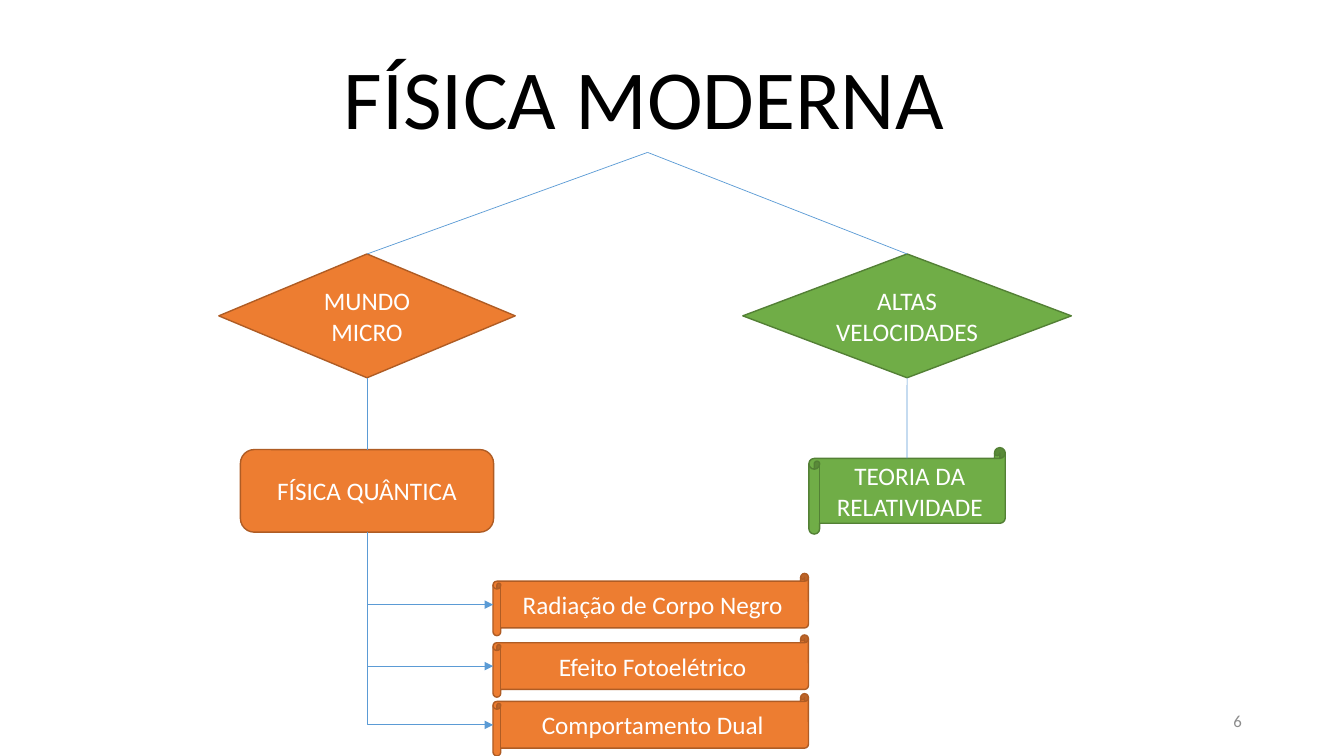
from lxml.etree import SubElement
from pptx import Presentation
from pptx.dml.color import RGBColor
from pptx.enum.shapes import MSO_CONNECTOR as LINK, MSO_SHAPE as SHAPE
from pptx.enum.text import MSO_ANCHOR as ANCHOR, MSO_AUTO_SIZE as FIT, PP_ALIGN as ALIGN
from pptx.oxml.ns import qn
from pptx.util import Cm, Pt

# Content: text, then centre x, top, width, height in cm
TITLE = ("FÍSICA MODERNA", 16.32, 1.02, 15.82, 2.82)
PAGE_NUMBER = ("6", 31.09, 17.65, 0.91, 1.02)
NODES = {
    "micro": ("MUNDO MICRO", 9.25, 6.4, 7.47, 3.12, SHAPE.DIAMOND, "orange"),
    "fast": ("ALTAS VELOCIDADES", 22.86, 6.4, 8.28, 3.12, SHAPE.DIAMOND, "green"),
    "quantum": ("FÍSICA QUÂNTICA", 9.25, 11.33, 6.38, 2.08, SHAPE.ROUNDED_RECTANGLE, "orange"),
    "relativity": ("TEORIA DA RELATIVIDADE", 22.86, 11.28, 4.95, 2.18, SHAPE.HORIZONTAL_SCROLL, "green"),
}
TOPICS = [("Radiação de Corpo Negro", 14.45), ("Efeito Fotoelétrico", 16), ("Comportamento Dual", 17.48)]
TOPIC_CENTRE, TOPIC_WIDTH, TOPIC_HEIGHT = 16.4, 7.95, 1.57
LINKS = [("title", "micro"), ("title", "fast"), ("micro", "quantum"), ("fast", "relativity")]

COLORS = {
    "orange": "ED7D31", "orange edge": "AF5C24",
    "green": "70AD47", "green edge": "538035",
    "link": "5B9BD5", "white": "FFFFFF", "black": "000000", "grey": "8C8C8C",
}
SCROLL_CURL = 0.125  # the curl's share of a scroll's height


def rgb(name):
    return RGBColor.from_string(COLORS[name])


def frame(centre, top, width, height):
    return [Cm(value) for value in (centre - width / 2, top, width, height)]


def write(box, text, size, color, align, anchor, fit=FIT.NONE):
    body = box.text_frame
    for name, value in {"word_wrap": True, "auto_size": fit, "vertical_anchor": anchor}.items():
        setattr(body, name, value)
    para = body.paragraphs[0]
    para.alignment = align
    span = para.add_run()
    span.text = text
    for name, value in {"name": "Calibri", "size": Pt(size)}.items():
        setattr(span.font, name, value)
    span.font.color.rgb = rgb(color)


def add_node(page, text, centre, top, width, height, kind, color):
    node = page.shapes.add_shape(kind, *frame(centre, top, width, height))
    node.shadow.inherit = False
    node.fill.solid()
    node.fill.fore_color.rgb = rgb(color)
    node.line.color.rgb = rgb(color + " edge")
    node.line.width = Pt(1)
    write(node, text, 18, "white", ALIGN.CENTER, ANCHOR.MIDDLE)
    return node


def add_link(page, kind, arrow=False):
    link = page.shapes.add_connector(kind, 0, 0, 0, 0)
    link.line.color.rgb = rgb("link")
    link.line.width = Pt(0.5)
    if arrow:
        SubElement(link.line._get_or_add_ln(), qn("a:tailEnd"), type="triangle")
    SubElement(link._element.spPr, qn("a:effectLst"))
    return link


def add_branch(page, source, target):
    """Elbow that drops from the source's bottom and turns right to the target."""
    start_x, start_y = source.left + source.width // 2, source.top + source.height
    run = target.left - start_x
    drop = target.top + target.height // 2 - start_y
    link = add_link(page, LINK.ELBOW, arrow=True)
    # The one-bend preset is turned by 270 degrees, so its box swaps width and height
    place = {"left": start_x + (run - drop) // 2, "top": start_y + (drop - run) // 2,
             "width": drop, "height": run}
    for name, value in place.items():
        setattr(link, name, value)
    properties = link._element.spPr
    properties.find(qn("a:prstGeom")).set("prst", "bentConnector2")
    turn = properties.find(qn("a:xfrm"))
    turn.set("rot", "16200000")
    turn.set("flipH", "1")


def main():
    deck = Presentation()
    deck.slide_width, deck.slide_height = Cm(33.87), Cm(19.05)
    page = deck.slides.add_slide(deck.slide_layouts[5])

    # Title and page number
    title = page.shapes.title
    title.left, title.top, title.width, title.height = frame(*TITLE[1:])
    write(title, TITLE[0], 60, "black", ALIGN.LEFT, ANCHOR.TOP, FIT.SHAPE_TO_FIT_TEXT)
    number = page.shapes.add_textbox(*frame(*PAGE_NUMBER[1:]))
    write(number, PAGE_NUMBER[0], 12, "grey", ALIGN.RIGHT, ANCHOR.MIDDLE)

    # Nodes of the tree
    boxes = {"title": title}
    for key, node in NODES.items():
        boxes[key] = add_node(page, *node)
    topics = [add_node(page, text, TOPIC_CENTRE, top, TOPIC_WIDTH, TOPIC_HEIGHT,
                       SHAPE.HORIZONTAL_SCROLL, "orange") for text, top in TOPICS]

    # Straight links, from bottom to top
    for source, target in LINKS:
        link = add_link(page, LINK.STRAIGHT)
        link.begin_connect(boxes[source], 2)
        link.end_connect(boxes[target], 0)
        if boxes[target].auto_shape_type == SHAPE.HORIZONTAL_SCROLL:
            link.end_y = boxes[target].top + int(boxes[target].height * SCROLL_CURL)

    # Arrows to the quantum topics
    for topic in topics:
        add_branch(page, boxes["quantum"], topic)

    deck.save("out.pptx")


if __name__ == "__main__":
    main()
